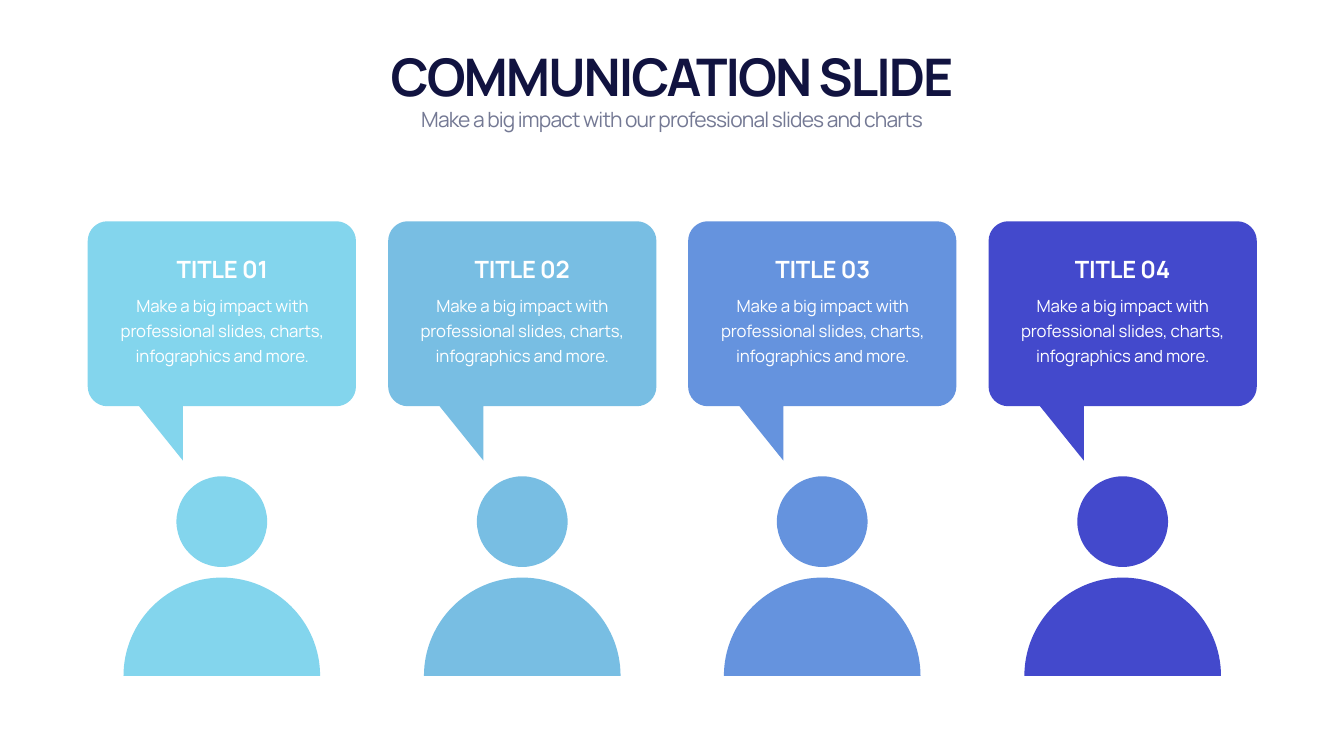
import lxml.etree
import pptx
import pptx.dml.color
import pptx.enum.shapes
import pptx.enum.text
import pptx.oxml.ns
import pptx.util

PX = 9144  # EMU in one px, at 100 px to the inch
FONT = "Manrope"
COLUMN_COLORS = ["83D5ED", "78BEE3", "6593DE", "4349CC"]
BUBBLE_LEFTS = (174, 1961)  # first and last column
TEXT_LEFTS = (200, 1986)
BUBBLE_WIDTH, BUBBLE_TOP, BUBBLE_BOTTOM, TAIL_TIP = 532, 439, 806, 914
CORNER = 39
HEAD_TOP, HEAD_SIZE = 945, 180
SHOULDER_BASE, SHOULDER_RADIUS = 1341, 195
ROUNDNESS = 0.55  # control point distance of a quarter circle, per radius
DESCRIPTION = "Make a big impact with professional slides, charts, infographics and more."


def rgb(value):
    return pptx.dml.color.RGBColor.from_string(value)


def paint(shape, color):
    shape.shadow.inherit = False
    shape.fill.solid()
    shape.fill.fore_color.rgb = rgb(color)
    shape.line.fill.background()


def add_text(slide, text, left, top, width, height, *, size, color="FFFFFF",
             bold=False, spacing=0, line_points=None, bottom=False):
    box = slide.shapes.add_textbox(*(value * PX for value in (left, top, width, height)))
    frame = box.text_frame
    frame.word_wrap = True
    frame.auto_size = pptx.enum.text.MSO_AUTO_SIZE.SHAPE_TO_FIT_TEXT
    anchor = pptx.enum.text.MSO_ANCHOR
    frame.vertical_anchor = anchor.BOTTOM if bottom else anchor.TOP
    paragraph = frame.paragraphs[0]
    paragraph.alignment = pptx.enum.text.PP_ALIGN.CENTER
    if line_points:
        paragraph.line_spacing = pptx.util.Pt(line_points)
    run = paragraph.add_run()
    run.text = text
    run.font.name = FONT
    run.font.size = pptx.util.Pt(size)
    run.font.bold = bold
    run.font.color.rgb = rgb(color)
    # Letter spacing, in hundredths of a point
    run.font._element.set("spc", str(round(spacing * 100)))


def add_outline(slide, start, steps, color):
    """Each step is (end, corner); a corner rounds the step into a quarter circle."""
    builder = slide.shapes.build_freeform(start[0] * PX, start[1] * PX, scale=1.0)
    builder.add_line_segments([(x * PX, y * PX) for (x, y), _ in steps], close=True)
    shape = builder.convert_to_shape()
    paint(shape, color)

    # Turn the rounded steps into curves
    lines = list(shape._element.iter(pptx.oxml.ns.qn("a:lnTo")))
    begin = start
    for line, (end, corner) in zip(lines, steps):
        if corner:
            line.tag = pptx.oxml.ns.qn("a:cubicBezTo")
            controls = [[origin + ROUNDNESS * (target - origin)
                         for origin, target in zip(point, corner)]
                        for point in (begin, end)]
            for index, (x, y) in enumerate(controls):
                point = lxml.etree.Element(pptx.oxml.ns.qn("a:pt"))
                point.set("x", str(round(x * PX) - shape.left))
                point.set("y", str(round(y * PX) - shape.top))
                line.insert(index, point)
        begin = end


def add_bubble(slide, left, color):
    right, top, bottom = left + BUBBLE_WIDTH, BUBBLE_TOP, BUBBLE_BOTTOM
    steps = [
        ((left + CORNER, top), None),
        ((left, top + CORNER), (left, top)),
        ((left, bottom - CORNER), None),
        ((left + CORNER, bottom), (left, bottom)),
        # Tail
        ((left + 102, bottom), None),
        ((left + 189, TAIL_TIP), None),
        ((left + 189, bottom), None),
        ((right - CORNER, bottom), None),
        ((right, bottom - CORNER), (right, bottom)),
        ((right, top + CORNER), None),
        ((right - CORNER, top), (right, top)),
    ]
    add_outline(slide, (right - CORNER, top), steps, color)


def add_person(slide, center, color):
    head = slide.shapes.add_shape(
        pptx.enum.shapes.MSO_SHAPE.OVAL, (center - HEAD_SIZE // 2) * PX,
        HEAD_TOP * PX, HEAD_SIZE * PX, HEAD_SIZE * PX)
    paint(head, color)

    left, right = center - SHOULDER_RADIUS, center + SHOULDER_RADIUS
    top = SHOULDER_BASE - SHOULDER_RADIUS
    steps = [
        ((left, SHOULDER_BASE), (left, top)),
        ((right, SHOULDER_BASE), None),
        ((center, top), (right, top)),
    ]
    add_outline(slide, (center, top), steps, color)


def add_message(slide, number, left):
    add_text(slide, f"TITLE {number:02}", left, 500, 482, 67,
             size=34, bold=True, spacing=-0.3, bottom=True)
    add_text(slide, DESCRIPTION, left, 571, 482, 159,
             size=24, spacing=-0.2, line_points=36)


def spread(ends, index):
    first, last = ends
    return round(first + index * (last - first) / (len(COLUMN_COLORS) - 1))


def main():
    presentation = pptx.Presentation()
    presentation.slide_width = 2666 * PX
    presentation.slide_height = 1500 * PX
    slide = presentation.slides.add_slide(presentation.slide_layouts[6])

    # Speakers and their bubbles
    for index, color in enumerate(COLUMN_COLORS):
        left = spread(BUBBLE_LEFTS, index)
        add_person(slide, left + BUBBLE_WIDTH // 2, color)
        add_bubble(slide, left, color)

    # Heading
    add_text(slide, "COMMUNICATION SLIDE", 166, 82, 2334, 135,
             size=74, color="111340", bold=True, spacing=-2.9, bottom=True)
    add_text(slide, "Make a big impact with our professional slides and charts",
             166, 207, 2334, 61, size=30, color="747994", spacing=-1.2)

    # Bubble messages
    for index in range(len(COLUMN_COLORS)):
        add_message(slide, index + 1, spread(TEXT_LEFTS, index))

    presentation.save("out.pptx")


if __name__ == "__main__":
    main()
